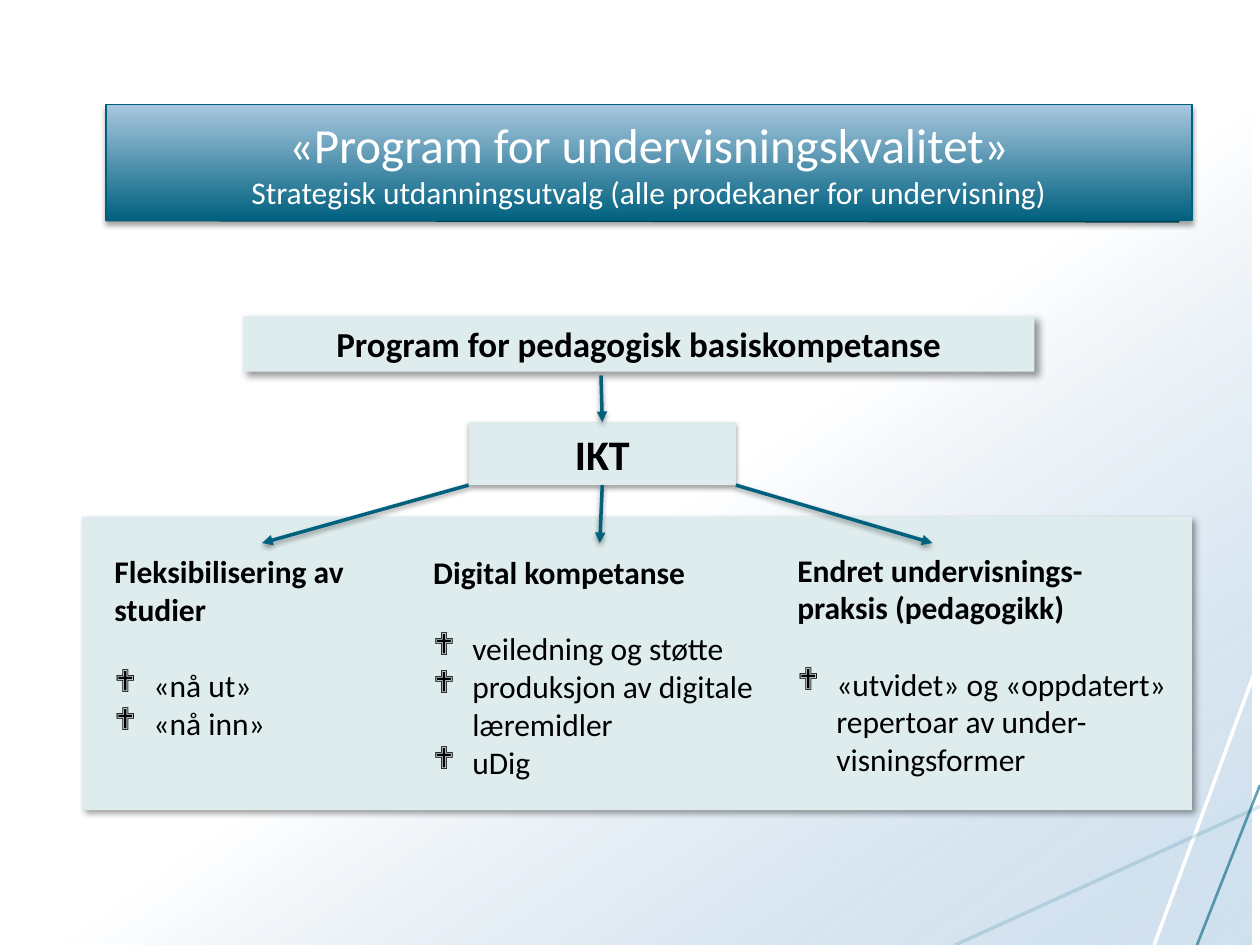
import pptx
import pptx.util
import pptx.dml.color
import pptx.enum.shapes
import pptx.enum.text
import pptx.oxml
import pptx.oxml.ns
import lxml.etree

Inches, Pt = pptx.util.Inches, pptx.util.Pt
RGB = pptx.dml.color.RGBColor.from_string
RECTANGLE = pptx.enum.shapes.MSO_SHAPE.RECTANGLE
STRAIGHT = pptx.enum.shapes.MSO_CONNECTOR.STRAIGHT
CENTER = pptx.enum.text.PP_ALIGN.CENTER
COLORS = {"teal": "00617F", "edge": "005F7C", "sea": "15718F", "sky": "A9C7E0",
          "mint": "DEECED", "white": "FFFFFF", "black": "000000"}
FONT = "Calibri"
# Shadows: opacity %, blur, distance, angle
SIDE_SHADOW = (40, 4, 3, 45)
LOW_SHADOW = (38, 3.1, 1.6, 90)
BANNER_SHADOW = (35, 3.1, 1.8, 90)


def add_child(parent, tag, **attributes):
    child = lxml.etree.SubElement(parent, pptx.oxml.ns.qn(tag))
    for name, value in attributes.items():
        child.set(name, str(value))
    return child


def set_shadow(properties, shadow):
    effects = properties.find(pptx.oxml.ns.qn("a:effectLst"))
    if effects is None:
        effects = add_child(properties, "a:effectLst")
    if shadow:
        opacity, blur, distance, angle = shadow
        outer = add_child(effects, "a:outerShdw", blurRad=int(Pt(blur)), dist=int(Pt(distance)),
                          dir=angle * 60000, algn="ctr", rotWithShape=0)
        color = add_child(outer, "a:srgbClr", val=COLORS["black"])
        add_child(color, "a:alpha", val=opacity * 1000)


deck = pptx.Presentation()
deck.slide_width, deck.slide_height = Inches(10), Inches(7.5)
page = deck.slides.add_slide(deck.slide_layouts[6])

# Background wash, fading into blue at the lower right
wash = page.shapes.add_shape(RECTANGLE, Inches(-0.07), 0, Inches(10), Inches(7.5))
wash.shadow.inherit = False
wash.line.fill.background()
wash.fill.gradient()
wash.fill.gradient_angle = 305
for stop, position, color in zip(wash.fill.gradient_stops, (0.54, 1), ("white", "sky")):
    stop.position = position
    stop.color.rgb = RGB(COLORS[color])
last_color = wash._element.spPr.findall(".//" + pptx.oxml.ns.qn("a:srgbClr"))[-1]
add_child(last_color, "a:alpha", val=54000)

# Decorative lines: start, end, colour, width, opacity %
for x1, y1, x2, y2, color, width, opacity in [
        (10, 5.22, 9.16, 7.5, "white", 2, 100),
        (10, 6.4, 7.58, 7.5, "sea", 2, 16),
        (10, 6.23, 9.5, 7.5, "teal", 1.5, 60),
        (0.84, 1.75, 9.36, 1.76, "teal", 1, 100)]:
    line = page.shapes.add_connector(STRAIGHT, Inches(x1), Inches(y1), Inches(x2), Inches(y2))
    line.line.color.rgb = RGB(COLORS[color])
    line.line.width = Pt(width)
    if opacity < 100:
        add_child(line._element.spPr.find(".//" + pptx.oxml.ns.qn("a:srgbClr")),
                  "a:alpha", val=opacity * 1000)
    set_shadow(line._element.spPr, None)

# Boxes: place, shadow, lines of (text, size, bold)
boxes = {}
for name, left, top, width, height, shadow, lines in [
        ("panel", 0.65, 4.1, 8.81, 2.33, SIDE_SHADOW, []),
        ("banner", 0.84, 0.83, 8.62, 0.92, BANNER_SHADOW,
         [("«Program for undervisningskvalitet»", 28, False),
          ("Strategisk utdanningsutvalg (alle prodekaner for undervisning)", 18, False)]),
        ("ikt", 3.72, 3.35, 2.12, 0.5, LOW_SHADOW, [("IKT", 24, True)]),
        ("program", 1.93, 2.51, 6.28, 0.44, SIDE_SHADOW,
         [("Program for pedagogisk basiskompetanse", 20, True)])]:
    box = page.shapes.add_shape(RECTANGLE, Inches(left), Inches(top), Inches(width), Inches(height))
    boxes[name] = box
    box.shadow.inherit = False
    set_shadow(box._element.spPr, shadow)
    if name == "banner":
        box.fill.gradient()
        box.fill.gradient_angle = 90
        for stop, position, color in zip(box.fill.gradient_stops, (0, 1), ("teal", "sky")):
            stop.position = position
            stop.color.rgb = RGB(COLORS[color])
        box.line.color.rgb = RGB(COLORS["edge"])
        box.line.width = Pt(0.75)
    else:
        box.fill.solid()
        box.fill.fore_color.rgb = RGB(COLORS["mint"])
        box.line.fill.background()
    box.text_frame.word_wrap = True
    box.text_frame.vertical_anchor = pptx.enum.text.MSO_ANCHOR.MIDDLE
    para = box.text_frame.paragraphs[0]
    para.alignment = CENTER
    for index, (text, size, bold) in enumerate(lines):
        if index:
            para.add_line_break()
        span = para.add_run()
        span.text = text
        span.font.name, span.font.size, span.font.bold = FONT, Pt(size), bold
        span.font.color.rgb = RGB(COLORS["white" if name == "banner" else "black"])

# Three columns: place, heading paragraphs, bullets
for left, top, width, height, headings, bullets in [
        (0.81, 4.33, 2.09, 1.62, ["Fleksibilisering av \nstudier"], ["«nå ut»", "«nå inn»"]),
        (3.34, 4.34, 2.77, 2.22, ["Digital kompetanse"],
         ["veiledning og støtte", "produksjon av digitale\nlæremidler", "uDig"]),
        (6.23, 4.32, 3.17, 1.92, ["Endret undervisnings-", "praksis (pedagogikk)"],
         ["«utvidet» og «oppdatert»\nrepertoar av under-\nvisningsformer"])]:
    column = page.shapes.add_textbox(Inches(left), Inches(top), Inches(width), Inches(height))
    frame = column.text_frame
    frame.word_wrap = False
    frame.auto_size = pptx.enum.text.MSO_AUTO_SIZE.SHAPE_TO_FIT_TEXT
    for index, text in enumerate(headings + bullets):
        para = frame.add_paragraph() if index else frame.paragraphs[0]
        is_bullet = index >= len(headings)
        if index == len(headings):
            para.space_before = Pt(22)
        if is_bullet:
            properties = para._p.get_or_add_pPr()
            properties.set("marL", str(int(Inches(0.31))))
            properties.set("indent", str(int(Inches(-0.31))))
            add_child(properties, "a:buFont", typeface="Wingdings")
            add_child(properties, "a:buChar", char="❖")
        for number, part in enumerate(text.split("\n")):
            if number:
                para.add_line_break()
            span = para.add_run()
            span.text = part
            span.font.name, span.font.size, span.font.bold = FONT, Pt(18), not is_bullet
            span.font.color.rgb = RGB(COLORS["black"])

# Arrows: start, end, side of the IKT box joined at the start or end
for x1, y1, x2, y2, start_side, end_side in [
        (3.72, 3.85, 2.08, 4.31, None, None),
        (4.77, 3.85, 4.76, 4.31, 2, None),
        (5.84, 3.85, 7.4, 4.31, None, None),
        (4.77, 2.98, 4.76, 3.35, None, 0)]:
    arrow = page.shapes.add_connector(STRAIGHT, Inches(x1), Inches(y1), Inches(x2), Inches(y2))
    if start_side is not None:
        arrow.begin_connect(boxes["ikt"], start_side)
    if end_side is not None:
        arrow.end_connect(boxes["ikt"], end_side)
    arrow.line.color.rgb = RGB(COLORS["teal"])
    arrow.line.width = Pt(2)
    add_child(arrow.line._get_or_add_ln(), "a:tailEnd", type="triangle")
    set_shadow(arrow._element.spPr, LOW_SHADOW)

deck.save("out.pptx")
